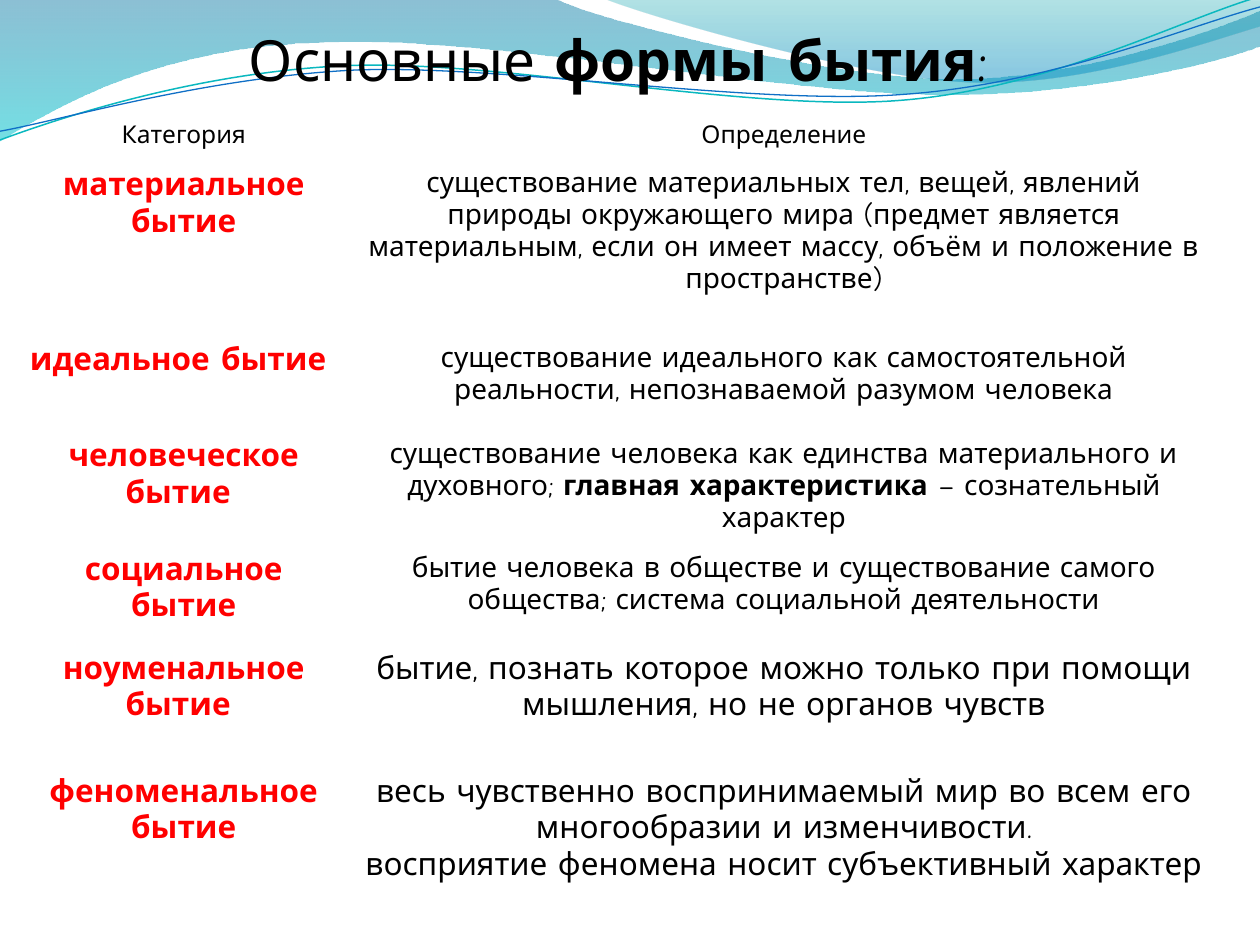
from math import cos, radians, sin

from lxml import etree
from pptx import Presentation
from pptx.dml.color import RGBColor
from pptx.enum.text import MSO_ANCHOR, PP_ALIGN
from pptx.oxml.ns import qn
from pptx.util import Pt

CENTER = PP_ALIGN.CENTER
BOTTOM = MSO_ANCHOR.BOTTOM
FONT = "Comic Neue"
COLORS = {
    "text": "000000", "term": "FF0000",
    "deep": "0074A1", "aqua": "00C6CF", "teal": "00A1A9", "sky": "008BBF",
    "teal_line": "0AB8BF", "blue_line": "0F6FC6",
}
NO_STYLE = "{2D5ABB26-0587-4C30-8999-92F81FD0307C}"
TILT = 357.3

LEFT_WAVE = [
    (0, 0), (317, -1),
    (343, 12, 478, 45, 546, 45), (614, 45, 690, 19, 720, 6), (720.5, 26),
    (708, 32, 626, 55, 537, 54), (448, 54, 275, 20, 185, 24),
    (93, 26, 33, 60, -1, 81), (0, 0),
]
RIGHT_WAVE = [
    (345, -1), (366, 8, 491, 45, 554, 47), (619, 50, 692, 23, 720, 15),
    (720, 0), (345, -1),
]
TEAL_CURVE = [
    (0, 80), (35, 67, 114, 41, 199, 37.5), (284, 34, 427, 64, 513, 57.5),
    (600, 51, 675, 11, 718.5, -1.5),
]
BLUE_CURVE = [
    (0, 75), (34, 69, 118, 44, 204, 40), (290, 37, 430, 60.5, 516, 54),
    (602, 48, 678, 15, 720, 4),
]

COL_WIDTHS = [193, 493]
ROW_HEIGHTS = [26.5, 100, 55, 58, 56.5, 70.5, 70.5]
HEADER = ["Категория", "Определение"]
FORMS = [
    ("материальное бытие", 16,
     ["существование материальных тел, вещей, явлений природы окружающего мира "
      "(предмет является материальным, если он имеет массу, объём и положение "
      "в пространстве)"]),
    ("идеальное бытие ", 16,
     ["существование идеального как самостоятельной реальности, непознаваемой "
      "разумом человека"]),
    ("человеческое бытие ", 16,
     ["существование человека как единства материального и духовного; ",
      ("главная характеристика ", {"bold": True}), "– сознательный характер"]),
    ("социальное бытие", 16,
     ["бытие человека в обществе и существование самого общества; система "
      "социальной деятельности"]),
    ("ноуменальное бытие ", 18,
     ["бытие, познать которое можно только при помощи мышления, но не органов "
      "чувств"]),
    ("феноменальное бытие", 18,
     ["весь чувственно воспринимаемый мир во всем его многообразии и "
      "изменчивости.\nвосприятие феномена носит субъективный характер "]),
]


def add_text(p, text, size=18, color="text", bold=False):
    """Add formatted text to a paragraph, breaking lines at newlines."""
    for i, line in enumerate(text.split("\n")):
        if i:
            p.add_line_break()
        r = p.add_run()
        r.text = line
        r.font.name = FONT
        r.font.size = Pt(size)
        r.font.bold = bold
        r.font.color.rgb = RGBColor.from_string(COLORS[color])


def turn(segment, center, angle):
    """Rotate the points of a segment clockwise around a center."""
    (cx, cy), c, s = center, cos(radians(angle)), sin(radians(angle))
    turned = []
    for x, y in zip(segment[::2], segment[1::2]):
        dx, dy = x - cx, y - cy
        turned += [cx + c * dx - s * dy, cy + s * dx + c * dy]
    return turned


class SlideBuilder:
    """Holds the style and the current slide."""

    def __init__(self, prs):
        self.s = prs.slides.add_slide(prs.slide_layouts[6])

    def outline(self, segments, close):
        """Build a freeform of lines and cubic curves without shadow."""
        points = [(Pt(x), Pt(y)) for seg in segments
                  for x, y in zip(seg[::2], seg[1::2])]
        builder = self.s.shapes.build_freeform(*points[0])
        builder.add_line_segments(points[1:], close=close)
        sp = builder.convert_to_shape()
        sp.shadow.inherit = False
        lines = iter(list(sp._element.iter(qn("a:lnTo"))))
        for seg in segments[1:]:
            line = next(lines)
            if len(seg) == 6:
                line.tag = qn("a:cubicBezTo")
                for extra in (next(lines), next(lines)):
                    line.append(extra[0])
                    extra.getparent().remove(extra)
        return sp

    def wave(self, segments, stops):
        """Draw a closed shape with a translucent vertical gradient."""
        sp = self.outline(segments, True)
        sp.line.fill.background()
        sp.fill.gradient()
        sp.fill.gradient_angle = 270
        for stop, (position, color, _) in zip(sp.fill.gradient_stops, stops):
            stop.position = position
            stop.color.rgb = RGBColor.from_string(COLORS[color])
        for clr, (_, _, alpha) in zip(sp._element.spPr.iter(qn("a:srgbClr")), stops):
            etree.SubElement(clr, qn("a:alpha")).set("val", str(alpha * 1000))

    def curve(self, segments, center, color, width):
        """Draw an open curved line in a tilted frame."""
        sp = self.outline([turn(seg, center, -TILT) for seg in segments], False)
        sp.rotation = TILT
        sp.fill.background()
        sp.line.color.rgb = RGBColor.from_string(COLORS[color])
        sp.line.width = Pt(width)

    def title(self, runs, left, top, width, height):
        """Place the centred slide heading."""
        sp = self.s.shapes.add_textbox(Pt(left), Pt(top), Pt(width), Pt(height))
        tf = sp.text_frame
        tf.word_wrap = True
        tf.vertical_anchor = BOTTOM
        tf.margin_left = tf.margin_right = tf.margin_bottom = 0
        p = tf.paragraphs[0]
        p.alignment = CENTER
        for text, style in runs:
            add_text(p, text, **style)

    def cell(self, cell, runs, end_size=18, **style):
        """Fill one table cell with centred runs."""
        cell.fill.background()
        p = cell.text_frame.paragraphs[0]
        p.alignment = CENTER
        for run in runs:
            text, extra = (run, {}) if isinstance(run, str) else run
            add_text(p, text, **{**style, **extra})
        etree.SubElement(p._p, qn("a:endParaRPr")).set("sz", str(end_size * 100))

    def table(self, left, top):
        """Place the table of categories and definitions."""
        frame = self.s.shapes.add_table(
            len(ROW_HEIGHTS), len(COL_WIDTHS), Pt(left), Pt(top),
            Pt(sum(COL_WIDTHS)), Pt(sum(ROW_HEIGHTS)))
        table = frame.table
        table.first_row = table.horz_banding = False
        next(frame._element.iter(qn("a:tableStyleId"))).text = NO_STYLE
        for col, width in zip(table.columns, COL_WIDTHS):
            col.width = Pt(width)
        for row, height in zip(table.rows, ROW_HEIGHTS):
            row.height = Pt(height)
        for i, text in enumerate(HEADER):
            self.cell(table.cell(0, i), [text], size=14)
        for i, (term, size, definition) in enumerate(FORMS, 1):
            self.cell(table.cell(i, 0), [term], color="term", bold=True)
            self.cell(table.cell(i, 1), definition, end_size=size, size=size)


def main():
    """Build and save the slide."""
    prs = Presentation()
    prs.slide_width, prs.slide_height = Pt(720), Pt(540)
    slide = SlideBuilder(prs)
    slide.wave(LEFT_WAVE, [(0, "deep", 45), (1, "aqua", 55)])
    slide.wave(RIGHT_WAVE, [(0, "teal", 30), (0.8, "sky", 45)])
    slide.curve(TEAL_CURVE, (359.3, 41.4), "teal_line", 0.85)
    slide.curve(BLUE_CURVE, (360, 42.5), "blue_line", 0.75)
    slide.title([
        ("Основные ", {"size": 32.4}),
        ("формы бытия", {"size": 32.4, "bold": True}),
        (":", {"size": 32.4}),
        (" ", {"size": 39.6}),
    ], 36, 9.5, 648, 45)
    slide.table(8.5, 65.5)
    prs.save("out.pptx")


if __name__ == "__main__":
    main()
